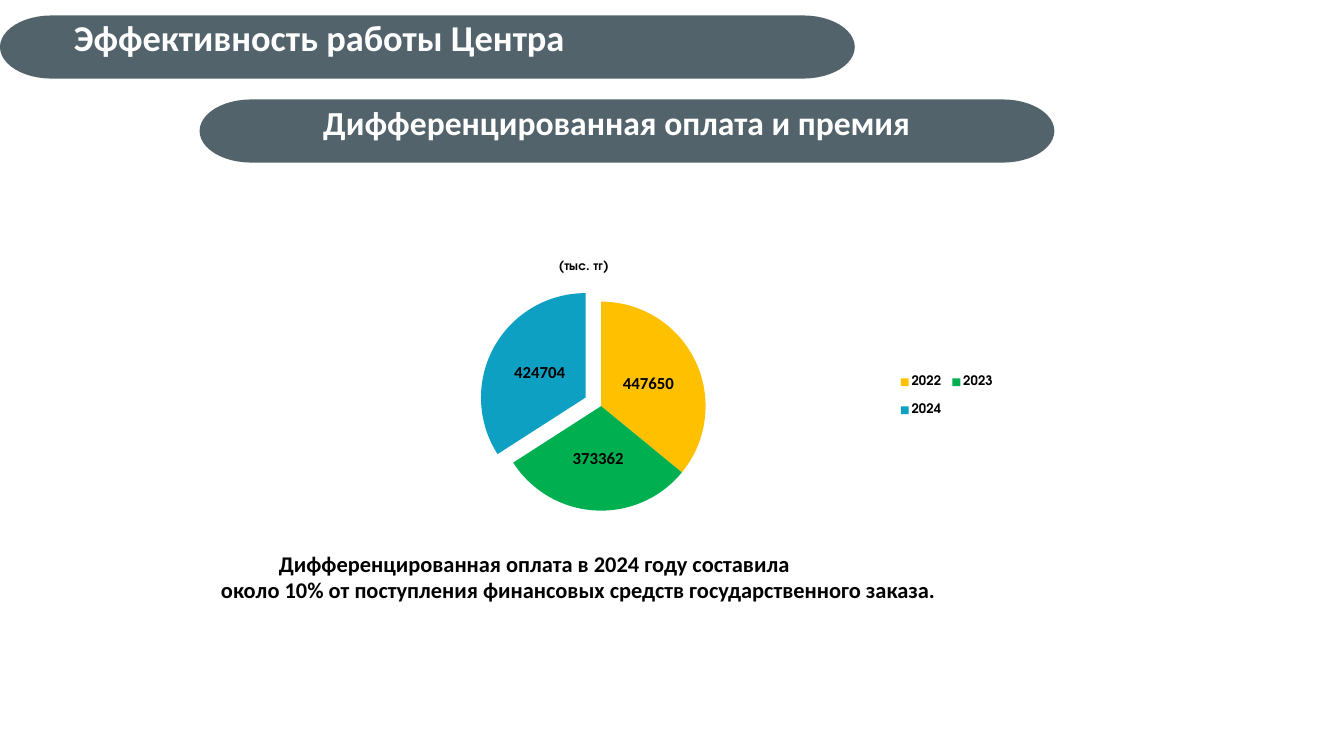
from dataclasses import dataclass
from math import cos, pi, sin

from lxml import etree
from pptx import Presentation
from pptx.chart.data import CategoryChartData
from pptx.dml.color import RGBColor as RGB
from pptx.enum.chart import XL_CHART_TYPE as ChartType
from pptx.enum.chart import XL_LABEL_POSITION as LabelPosition
from pptx.enum.chart import XL_LEGEND_POSITION as LegendPosition
from pptx.enum.text import MSO_ANCHOR as Anchor
from pptx.enum.text import PP_ALIGN as Align
from pptx.oxml.ns import qn
from pptx.util import Inches, Pt


@dataclass(frozen=True)
class Theme:
    banner: RGB = RGB.from_string("41535C")
    banner_opacity: int = 90
    white: RGB = RGB.from_string("FFFFFF")
    black: RGB = RGB.from_string("000000")
    slices: tuple = ("FFC000", "00B050", "0EA0C2")
    font: str = "Calibri"
    chart_font: str = "TeX Gyre Adventor"
    heading_size: int = 39
    subheading_size: int = 36
    note_size: int = 24
    label_size: int = 18
    legend_size: int = 14


def chart_element(tag, value):
    element = etree.Element(qn(f"c:{tag}"))
    element.set("val", str(value))
    return element


def set_layout(parent, index, inner=False, **fractions):
    """Place a chart part by fractions of the chart's size."""
    for old in parent.findall(qn("c:layout")):
        parent.remove(old)
    layout = etree.Element(qn("c:layout"))
    manual = etree.SubElement(layout, qn("c:manualLayout"))
    if inner:
        manual.append(chart_element("layoutTarget", "inner"))
    for mode in ("xMode", "yMode"):
        manual.append(chart_element(mode, "edge"))
    for name, value in fractions.items():
        manual.append(chart_element(name, value))
    parent.insert(index, layout)


class SlideBuilder:
    def __init__(self, slide, theme):
        self.slide = slide
        self.theme = theme

    def style(self, font, size, color, name=None):
        font.name = name or self.theme.font
        font.size = Pt(size)
        font.bold = True
        font.color.rgb = color

    def banner(self, left, top, text, size, text_left, text_top=0):
        """Bar with half-ellipse ends."""
        width, height, end, steps = 12.72, 0.94, 0.77, 24
        angles = [pi / 2 + pi * step / steps for step in range(steps + 1)]
        left_end = [(end + end * cos(a), height / 2 * (1 + sin(a))) for a in angles]
        right_end = [(width - x, height - y) for x, y in left_end]
        points = [(Inches(left + x), Inches(top + y)) for x, y in left_end + right_end]
        builder = self.slide.shapes.build_freeform(*points[0])
        builder.add_line_segments(points[1:], close=True)
        shape = builder.convert_to_shape()
        shape.shadow.inherit = False
        shape.fill.solid()
        shape.fill.fore_color.rgb = self.theme.banner
        color = shape.fill._xPr.find(".//" + qn("a:srgbClr"))
        alpha = etree.SubElement(color, qn("a:alpha"))
        alpha.set("val", str(self.theme.banner_opacity * 1000))
        shape.line.fill.background()

        frame = shape.text_frame
        frame.word_wrap = True
        frame.vertical_anchor = Anchor.TOP
        frame.margin_left, frame.margin_top = Inches(text_left), Inches(text_top)
        frame.margin_right = frame.margin_bottom = 0
        paragraph = frame.paragraphs[0]
        paragraph.text = text
        paragraph.alignment = Align.LEFT
        self.style(paragraph.font, size, self.theme.white)

    def note(self, left, top, width, height, lines):
        box = self.slide.shapes.add_textbox(
            Inches(left), Inches(top), Inches(width), Inches(height))
        frame = box.text_frame
        frame.word_wrap = True
        for number, (text, indent) in enumerate(lines):
            paragraph = frame.add_paragraph() if number else frame.paragraphs[0]
            paragraph.text = text
            paragraph.alignment = Align.JUSTIFY
            paragraph._p.get_or_add_pPr().set("marL", str(Inches(indent)))
            self.style(paragraph.font, self.theme.note_size, self.theme.black)

    def pie(self, left, top, width, height, title, values, pulled_out):
        theme = self.theme
        data = CategoryChartData()
        data.categories = list(values)
        data.add_series("Series 1", list(values.values()))
        chart = self.slide.shapes.add_chart(
            ChartType.PIE, Inches(left), Inches(top), Inches(width),
            Inches(height), data).chart
        self.style(chart.font, theme.label_size, theme.black)

        # Title
        chart.has_title = True
        paragraph = chart.chart_title.text_frame.paragraphs[0]
        paragraph.text = title
        self.style(paragraph.font, theme.legend_size, theme.black, theme.chart_font)
        set_layout(chart.chart_title._element, 1, x=0.445, y=0.25)

        # Legend
        chart.has_legend = True
        legend = chart.legend
        legend.position = LegendPosition.RIGHT
        legend.include_in_layout = False
        self.style(legend.font, theme.legend_size, theme.black, theme.chart_font)
        set_layout(legend._element, 1, x=0.86, y=0.54, w=0.13, h=0.2)

        # Slices
        plot = chart.plots[0]
        plot.vary_by_categories = True
        series = plot.series[0]
        for index, color in enumerate(theme.slices):
            slice_format = series.points[index].format
            slice_format.fill.solid()
            slice_format.fill.fore_color.rgb = RGB.from_string(color)
            slice_format.line.fill.background()
        slices = series._element.findall(qn("c:dPt"))
        for index, element in enumerate(slices):
            distance = pulled_out.get(index, 0)
            element.find(qn("c:spPr")).addprevious(chart_element("explosion", distance))
        slices[0].addprevious(chart_element("explosion", 6))

        # Value labels
        plot.has_data_labels = True
        labels = plot.data_labels
        labels.show_value = True
        labels.show_percentage = False
        labels.position = LabelPosition.CENTER
        self.style(labels.font, theme.label_size, theme.black)
        plot_area = chart._chartSpace.find(".//" + qn("c:plotArea"))
        set_layout(plot_area, 0, inner=True, x=0.134, y=0.357, w=0.732, h=0.621)


def main():
    presentation = Presentation()
    presentation.slide_width = Inches(20)
    presentation.slide_height = Inches(11.25)
    slide = presentation.slides.add_slide(presentation.slide_layouts[6])
    theme = Theme()
    builder = SlideBuilder(slide, theme)

    # Heading
    builder.banner(0, 0.23, "Эффективность работы Центра", theme.heading_size, 1.1)

    # Conclusion
    builder.note(3.05, 8.13, 12.25, 2.42, [
        ("Дифференцированная оплата в 2024 году составила", 1),
        ("около 10% от поступления финансовых средств государственного заказа.", 0.14),
    ])

    # Payments by year
    builder.pie(2.89, 2.5, 12.11, 5.31, "(тыс. тг)",
                {"2022": 447650, "2023": 373362, "2024": 424704}, {2: 17})

    # Subheading
    builder.banner(2.97, 1.48, "Дифференцированная оплата и премия",
                   theme.subheading_size, 1.84, 0.04)

    presentation.save("out.pptx")


if __name__ == "__main__":
    main()
